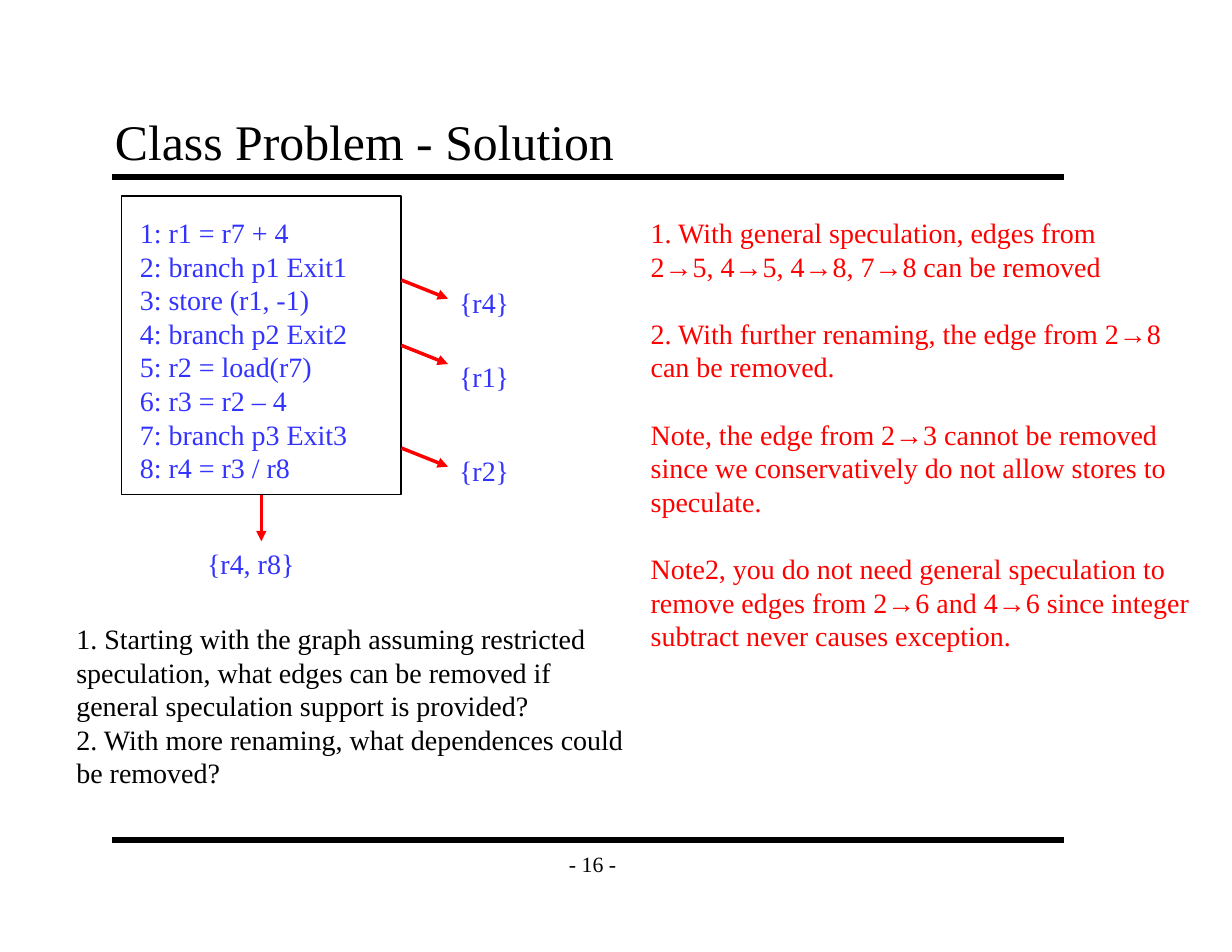
from lxml import etree
from pptx import Presentation
from pptx.dml.color import RGBColor
from pptx.enum.shapes import MSO_CONNECTOR, MSO_SHAPE
from pptx.enum.text import MSO_ANCHOR, PP_ALIGN
from pptx.oxml.ns import qn
from pptx.util import Pt

STRAIGHT = MSO_CONNECTOR.STRAIGHT
RECTANGLE = MSO_SHAPE.RECTANGLE
TOP, MIDDLE, BOTTOM = MSO_ANCHOR.TOP, MSO_ANCHOR.MIDDLE, MSO_ANCHOR.BOTTOM
LEFT, CENTER = PP_ALIGN.LEFT, PP_ALIGN.CENTER

COLORS = {"black": "000000", "code": "3333FF", "answer": "FF0000"}
LINE_HEIGHT = 21.6

CODE = [
    "1: r1 = r7 + 4",
    "2: branch p1 Exit1",
    "3: store (r1, -1)",
    "4: branch p2 Exit2",
    "5: r2 = load(r7)",
    "6: r3 = r2 – 4",
    "7: branch p3 Exit3",
    "8: r4 = r3 / r8",
]
QUESTIONS = [
    "1. Starting with the graph assuming restricted",
    "speculation, what edges can be removed if",
    "general speculation support is provided?",
    "2. With more renaming, what dependences could",
    "be removed?",
]
ANSWERS = [
    "1. With general speculation, edges from\n2→5, 4→5, 4→8, 7→8 can be removed",
    "2. With further renaming, the edge from 2→8\ncan be removed.",
    "Note, the edge from 2→3 cannot be removed\n"
    "since we conservatively do not allow stores to\nspeculate.",
    "Note2, you do not need general speculation to\n"
    "remove edges from 2→6 and 4→6 since integer\nsubtract never causes exception.",
]
SIDE_EXITS = [(180, 180, "{r4}"), (222, 227.5, "{r1}"), (288, 288, "{r2}")]


class SlideWriter:
    """Draws text, boxes and lines on one slide in a shared style."""

    font = "Times New Roman"

    def __init__(self, slide):
        self.slide = slide

    def text(self, left, top, width, height, lines, color, size=18, align=LEFT,
             anchor=TOP, inset=(7.2, 3.6), spacing=LINE_HEIGHT, gap=0):
        box = self.slide.shapes.add_textbox(Pt(left), Pt(top), Pt(width), Pt(height))
        frame = box.text_frame
        frame.word_wrap = False
        frame.vertical_anchor = anchor
        frame.margin_left = frame.margin_right = Pt(inset[0])
        frame.margin_top = frame.margin_bottom = Pt(inset[1])
        for index, line in enumerate(lines):
            para = frame.add_paragraph() if index else frame.paragraphs[0]
            para.text = line
            para.alignment = align
            para.space_before = Pt(gap if index else 0)
            if spacing:
                para.line_spacing = Pt(spacing)
            para.font.name = self.font
            para.font.size = Pt(size)
            para.font.color.rgb = RGBColor.from_string(COLORS[color])

    def outline(self, left, top, width, height):
        box = self.slide.shapes.add_shape(
            RECTANGLE, Pt(left), Pt(top), Pt(width), Pt(height))
        box.shadow.inherit = False
        box.fill.background()
        box.line.color.rgb = RGBColor.from_string(COLORS["black"])
        box.line.width = Pt(1)

    def line(self, start, end, color, width, arrow=False):
        line = self.slide.shapes.add_connector(
            STRAIGHT, Pt(start[0]), Pt(start[1]), Pt(end[0]), Pt(end[1]))
        line.line.color.rgb = RGBColor.from_string(COLORS[color])
        line.line.width = Pt(width)
        if arrow:
            etree.SubElement(line.line._get_or_add_ln(), qn("a:tailEnd"), type="triangle")
        etree.SubElement(line._element.spPr, qn("a:effectLst"))

    def arrow(self, start, end):
        self.line(start, end, "answer", 2.25, arrow=True)


def main():
    deck = Presentation()
    deck.slide_width, deck.slide_height = Pt(792), Pt(612)
    page = SlideWriter(deck.slides.add_slide(deck.slide_layouts[6]))

    for y in (114, 540):
        page.line((72, y), (684, y), "black", 4)
    page.text(354, 540, 54, 30, ["- 16 -"], "black", size=14, align=CENTER,
              anchor=MIDDLE, inset=(7.92, 4.32), spacing=None)
    page.text(66, 66, 612, 48, ["Class Problem - Solution"], "black", size=32,
              anchor=BOTTOM, inset=(7.92, 4.32), spacing=None)

    page.text(82.8, 135, 148.5, 180, CODE, "code")
    page.outline(78, 126, 180, 192)
    for arrow_top, label_top, label in SIDE_EXITS:
        page.arrow((258, arrow_top), (288, arrow_top + 12))
        page.text(288, label_top, 46.8, 28.8, [label], "code")
    page.arrow((168, 318), (168, 348))
    page.text(126, 348, 70.6, 28.8, ["{r4, r8}"], "code")

    page.text(42, 396, 367.2, 115.2, QUESTIONS, "black")
    page.text(411.2, 135, 363.6, 290.9, ANSWERS, "answer", gap=LINE_HEIGHT)

    deck.save("out.pptx")


if __name__ == "__main__":
    main()
